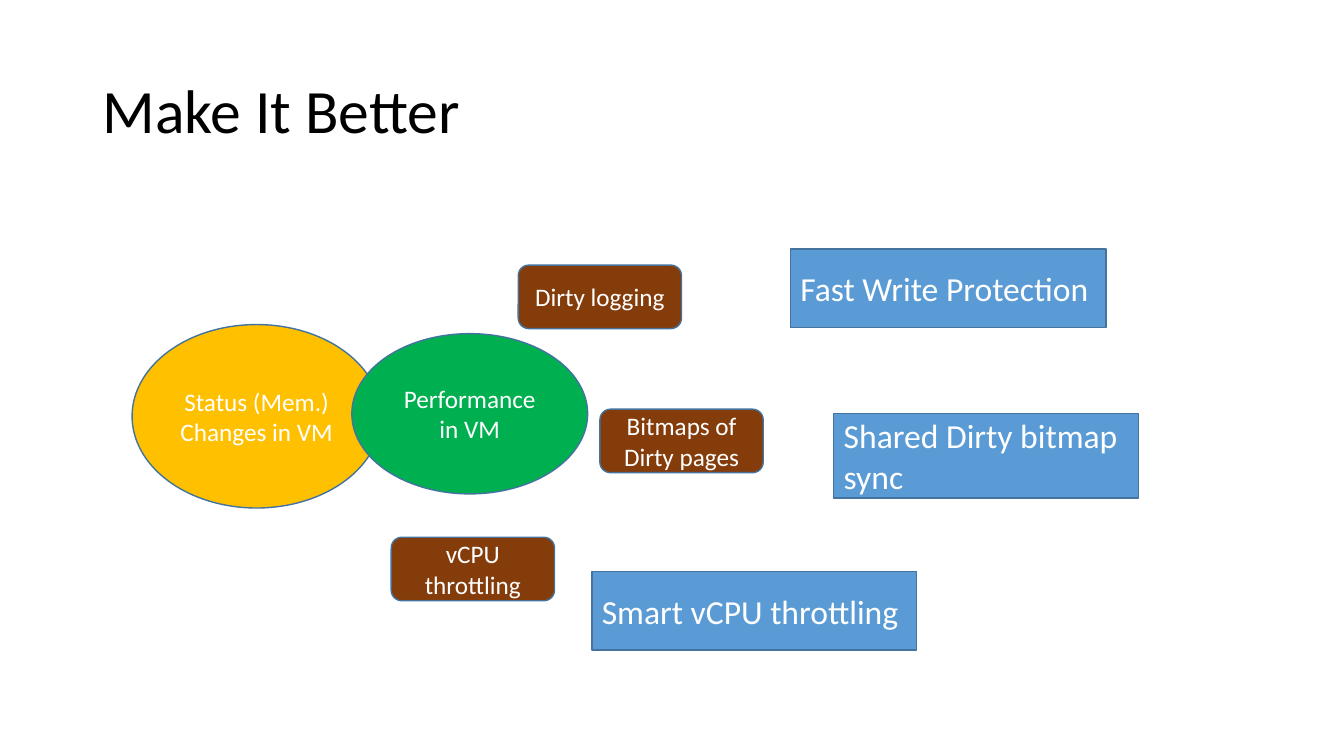
from pptx import Presentation
from pptx.dml.color import RGBColor
from pptx.enum.shapes import MSO_SHAPE
from pptx.enum.text import MSO_ANCHOR, PP_ALIGN
from pptx.util import Inches, Pt

OVAL, ROUNDED, BOX = MSO_SHAPE.OVAL, MSO_SHAPE.ROUNDED_RECTANGLE, MSO_SHAPE.RECTANGLE
LEFT, CENTER = PP_ALIGN.LEFT, PP_ALIGN.CENTER
MIDDLE = MSO_ANCHOR.MIDDLE

SLIDE_W, SLIDE_H = Inches(13.33), Inches(7.5)
FONT = "Calibri"
BLACK, WHITE, OUTLINE = "000000", "FFFFFF", "43739E"
AMBER, GREEN, BROWN, BLUE = "FFC000", "00B050", "843C0B", "5B9BD5"

# Areas are left, top, width, height in percent of the slide
TITLE_AREA = (6.9, 5.33, 86.25, 19.33)
CONCERNS = [
    ("Status (Mem.) Changes in VM", AMBER, (9.83, 42.93, 18.53, 24.27)),
    ("Performance in VM", GREEN, (26.18, 44.13, 17.55, 21.2)),
]
MECHANISM_SIZE = (12.15, 8.4)
MECHANISMS = [
    ("Dirty logging", (38.56, 35.07)),
    ("Bitmaps of Dirty pages", (44.64, 54.13)),
    ("vCPU throttling", (29.11, 71.07)),
]
IMPROVEMENTS = [
    ("Fast Write Protection", (58.81, 32.93, 23.48, 10.4)),
    ("Shared Dirty bitmap sync", (62.04, 54.67, 22.66, 11.2)),
    ("Smart vCPU throttling", (44.04, 75.6, 24.16, 10.4)),
]


def color(hex_code):
    return RGBColor.from_string(hex_code)


def to_slide(area):
    """Turn percentages of the slide into lengths."""
    return [int(share * side / 100)
            for share, side in zip(area, (SLIDE_W, SLIDE_H) * 2)]


def write(shape, text, size, hex_code, align):
    frame = shape.text_frame
    for name, value in {"word_wrap": True, "vertical_anchor": MIDDLE}.items():
        setattr(frame, name, value)
    paragraph = frame.paragraphs[0]
    paragraph.alignment = align
    run = paragraph.add_run()
    run.text = text
    for name, value in {"name": FONT, "size": Pt(size)}.items():
        setattr(run.font, name, value)
    run.font.color.rgb = color(hex_code)
    return paragraph


def add_title(slide, text):
    title = slide.shapes.add_textbox(*to_slide(TITLE_AREA))
    write(title, text, 44, BLACK, LEFT).line_spacing = 0.9


def add_label(slide, preset, text, fill, area, size=18, align=CENTER):
    label = slide.shapes.add_shape(preset, *to_slide(area))
    label.shadow.inherit = False
    label.fill.solid()
    label.fill.fore_color.rgb = color(fill)
    label.line.color.rgb = color(OUTLINE)
    label.line.width = Pt(1)
    write(label, text, size, WHITE, align)


def main():
    deck = Presentation()
    deck.slide_width, deck.slide_height = SLIDE_W, SLIDE_H
    slide = deck.slides.add_slide(deck.slide_layouts[6])

    add_title(slide, "Make It Better")
    for text, fill, area in CONCERNS:
        add_label(slide, OVAL, text, fill, area)
    for text, corner in MECHANISMS:
        add_label(slide, ROUNDED, text, BROWN, corner + MECHANISM_SIZE)
    for text, area in IMPROVEMENTS:
        add_label(slide, BOX, text, BLUE, area, size=24, align=LEFT)

    deck.save("out.pptx")


if __name__ == "__main__":
    main()
